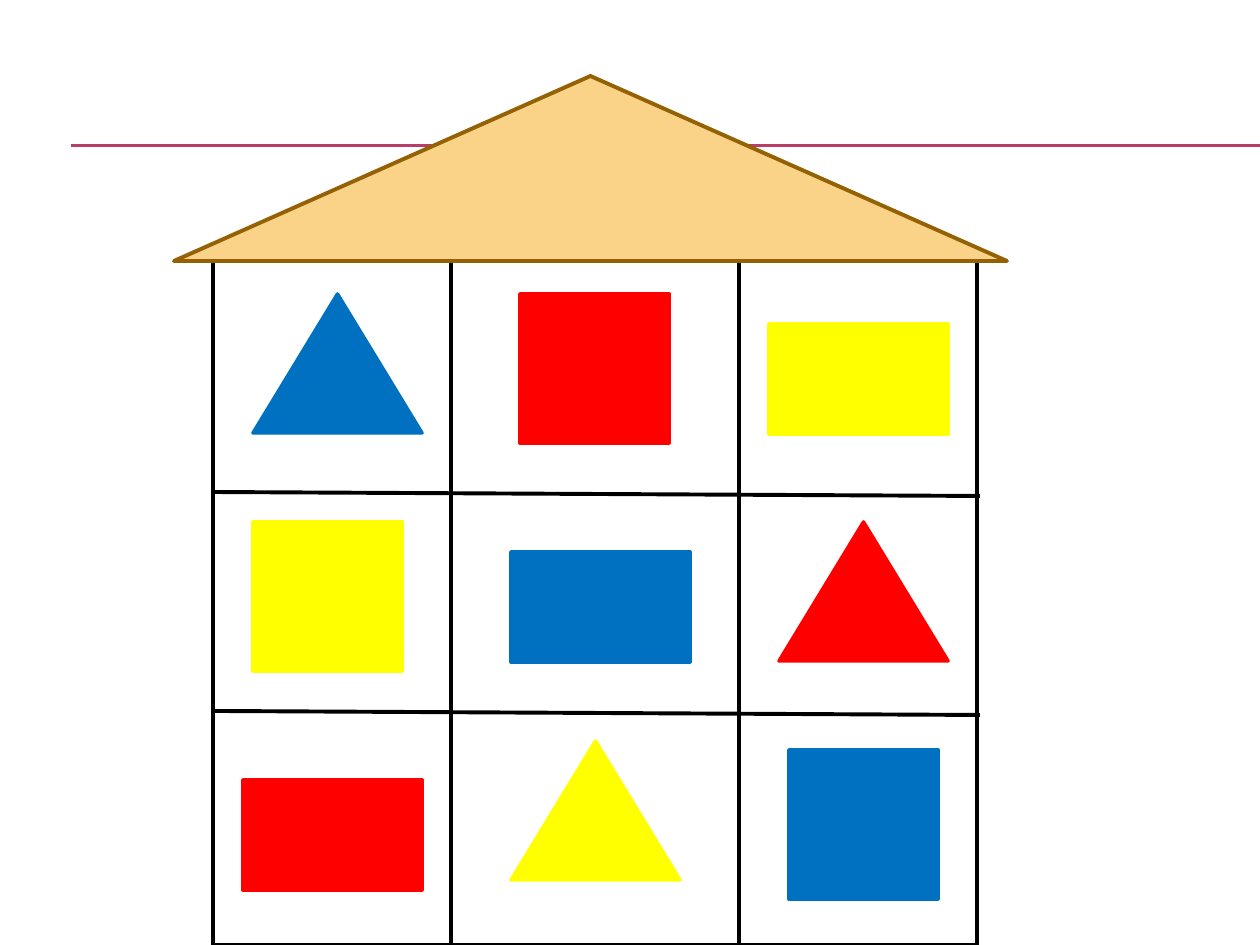
"""Draw a house whose nine rooms each hold a coloured shape."""
from typing import NamedTuple

from lxml import etree
from pptx import Presentation
from pptx.dml.color import RGBColor
from pptx.enum import shapes
from pptx.oxml import ns
from pptx.util import Emu, Inches, Pt

PX = Inches(1) / 126
PAGE_W, PAGE_H = 1260, 945

WHITE = RGBColor(0xFF, 0xFF, 0xFF)
BLACK = RGBColor(0x00, 0x00, 0x00)
RULE = RGBColor(0xB8, 0x3D, 0x68)
ROOF_FILL = RGBColor(0xFB, 0xD3, 0x88)
ROOF_EDGE = RGBColor(0x94, 0x62, 0x04)
BLUE = RGBColor(0x00, 0x70, 0xC0)
YELLOW = RGBColor(0xFF, 0xFF, 0x00)
RED = RGBColor(0xFF, 0x00, 0x00)

RECTANGLE = shapes.MSO_SHAPE.RECTANGLE
TRIANGLE = shapes.MSO_SHAPE.ISOSCELES_TRIANGLE


class Form(NamedTuple):
    """A kind of figure with its size in px."""
    preset: shapes.MSO_SHAPE
    width: int
    height: int


class Figure(NamedTuple):
    """A coloured form with its top left corner in px."""
    form: Form
    left: int
    top: int
    color: RGBColor


class Stroke(NamedTuple):
    """A straight line between two points in px."""
    x1: int
    y1: int
    x2: int
    y2: int
    color: RGBColor = BLACK
    weight: float = 2.25


HOUSE = Form(RECTANGLE, 764, 689)
ROOF = Form(TRIANGLE, 833, 185)
SQUARE = Form(RECTANGLE, 149, 149)
OBLONG = Form(RECTANGLE, 179, 110)
PEAK = Form(TRIANGLE, 169, 139)

RULES = [Stroke(71, y, PAGE_W, y, RULE, 0.75) for y in (145, 146)]
WALLS = [Stroke(x, 256, x, PAGE_H) for x in (451, 739)]
FLOORS = [Stroke(213, y, 980, y + 4) for y in (492, 711)]

FIGURES = [
    Figure(PEAK, 253, 294, BLUE),
    Figure(SQUARE, 520, 294, RED),
    Figure(OBLONG, 769, 324, YELLOW),
    Figure(SQUARE, 253, 522, YELLOW),
    Figure(OBLONG, 511, 552, BLUE),
    Figure(PEAK, 779, 522, RED),
    Figure(OBLONG, 243, 780, RED),
    Figure(PEAK, 511, 741, YELLOW),
    Figure(SQUARE, 789, 750, BLUE),
]


def px(length: int) -> Emu:
    """Turn px into EMU."""
    return Emu(round(length * PX))


def draw_figure(page, figure: Figure, edge: RGBColor, weight: float) -> None:
    """Add one filled and outlined figure."""
    form = figure.form
    box = page.shapes.add_shape(form.preset, px(figure.left), px(figure.top),
                                px(form.width), px(form.height))
    box.shadow.inherit = False
    box.fill.solid()
    box.fill.fore_color.rgb = figure.color
    box.line.color.rgb = edge
    box.line.width = Pt(weight)


def draw_strokes(page, strokes: list[Stroke]) -> None:
    """Add straight lines without shadow."""
    for stroke in strokes:
        line = page.shapes.add_connector(
            shapes.MSO_CONNECTOR.STRAIGHT, px(stroke.x1), px(stroke.y1),
            px(stroke.x2), px(stroke.y2))
        line.line.color.rgb = stroke.color
        line.line.width = Pt(stroke.weight)
        etree.SubElement(line._element.spPr, ns.qn("a:effectLst"))


def main() -> None:
    """Build and save the deck."""
    deck = Presentation()
    deck.slide_width, deck.slide_height = px(PAGE_W), px(PAGE_H)
    page = deck.slides.add_slide(deck.slide_layouts[6])

    draw_strokes(page, RULES)
    draw_figure(page, Figure(HOUSE, 213, 256, WHITE), BLACK, 2.25)
    draw_strokes(page, WALLS)
    draw_figure(page, Figure(ROOF, 174, 76, ROOF_FILL), ROOF_EDGE, 2.25)
    draw_strokes(page, FLOORS)
    for figure in FIGURES:
        draw_figure(page, figure, figure.color, 2)

    deck.save("out.pptx")


if __name__ == "__main__":
    main()
